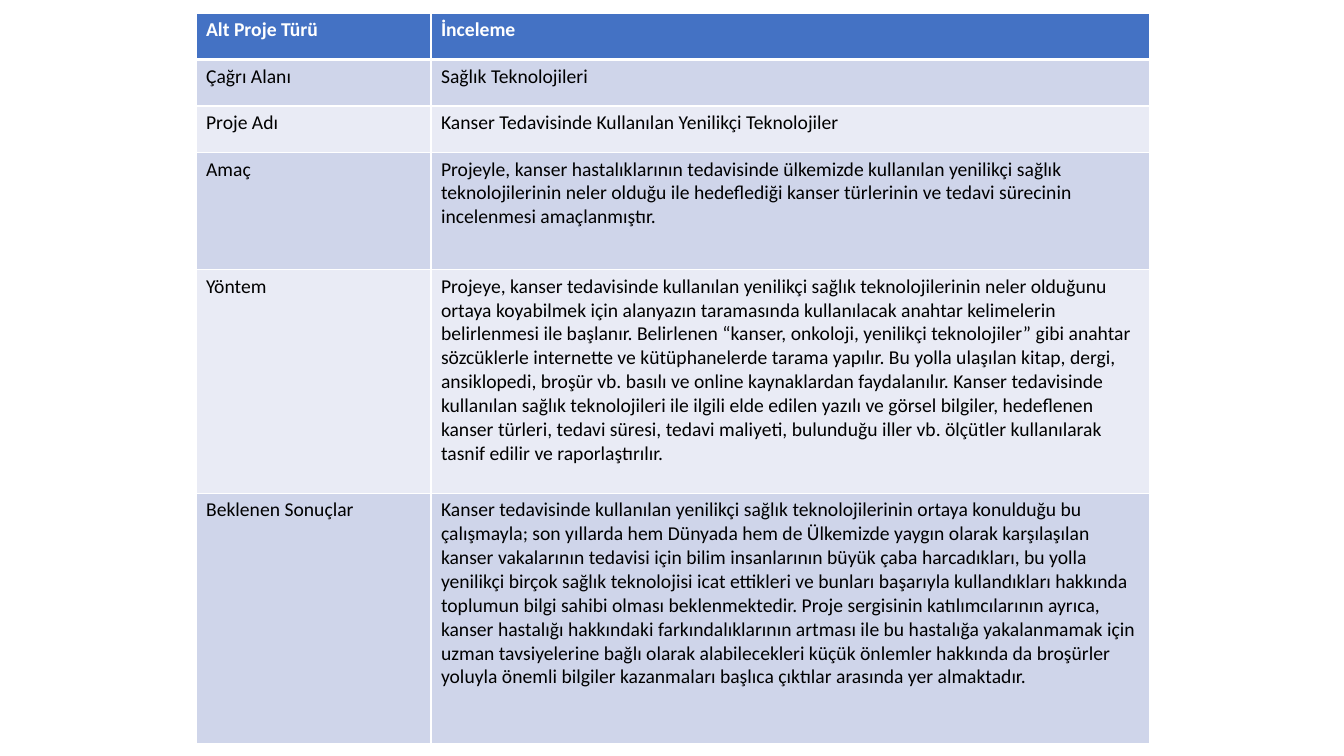
from dataclasses import dataclass

from lxml.etree import SubElement
from pptx import Presentation
from pptx.dml.color import RGBColor
from pptx.oxml.ns import qn
from pptx.util import Cm, Pt


@dataclass(frozen=True)
class Theme:
    """Colours, font and sizes of the slide."""
    font: str = "Calibri"
    size: int = 14
    head: str = "4472C4"
    bands: tuple = ("CFD5EA", "E9EBF5")
    light: str = "FFFFFF"
    dark: str = "000000"
    thin: int = 1
    thick: int = 3


THEME = Theme()
LEFT, TOP = 4.94, 0.33
WIDTHS = (5.92, 18.11)
ROWS = (
    (1.17, "Alt Proje Türü", "İnceleme"),
    (1.17, "Çağrı Alanı", "Sağlık Teknolojileri"),
    (1.17, "Proje Adı", "Kanser Tedavisinde Kullanılan Yenilikçi Teknolojiler"),
    (2.95, "Amaç",
     "Projeyle, kanser hastalıklarının tedavisinde ülkemizde kullanılan yenilikçi "
     "sağlık teknolojilerinin neler olduğu ile hedeflediği kanser türlerinin ve "
     "tedavi sürecinin incelenmesi amaçlanmıştır."),
    (5.64, "Yöntem",
     "Projeye, kanser tedavisinde kullanılan yenilikçi sağlık teknolojilerinin neler "
     "olduğunu ortaya koyabilmek için alanyazın taramasında kullanılacak anahtar "
     "kelimelerin belirlenmesi ile başlanır. Belirlenen “kanser, onkoloji, yenilikçi "
     "teknolojiler” gibi anahtar sözcüklerle internette ve kütüphanelerde tarama "
     "yapılır. Bu yolla ulaşılan kitap, dergi, ansiklopedi, broşür vb. basılı ve "
     "online kaynaklardan faydalanılır. Kanser tedavisinde kullanılan sağlık "
     "teknolojileri ile ilgili elde edilen yazılı ve görsel bilgiler, hedeflenen "
     "kanser türleri, tedavi süresi, tedavi maliyeti, bulunduğu iller vb. ölçütler "
     "kullanılarak tasnif edilir ve raporlaştırılır."),
    (6.3, "Beklenen Sonuçlar",
     "Kanser tedavisinde kullanılan yenilikçi sağlık teknolojilerinin ortaya "
     "konulduğu bu çalışmayla; son yıllarda hem Dünyada hem de Ülkemizde yaygın "
     "olarak karşılaşılan kanser vakalarının tedavisi için bilim insanlarının büyük "
     "çaba harcadıkları, bu yolla yenilikçi birçok sağlık teknolojisi icat ettikleri "
     "ve bunları başarıyla kullandıkları hakkında toplumun bilgi sahibi olması "
     "beklenmektedir. Proje sergisinin katılımcılarının ayrıca, kanser hastalığı "
     "hakkındaki farkındalıklarının artması ile bu hastalığa yakalanmamak için uzman "
     "tavsiyelerine bağlı olarak alabilecekleri küçük önlemler hakkında da broşürler "
     "yoluyla önemli bilgiler kazanmaları başlıca çıktılar arasında yer almaktadır."),
)


def set_edges(cell, top, base):
    """Draw the four borders of a cell, with given top and base widths."""
    props = cell._tc.get_or_add_tcPr()
    edges = {"L": THEME.thin, "R": THEME.thin, "T": top, "B": base}
    for side, width in edges.items():
        line = SubElement(props, qn(f"a:ln{side}"), w=str(Pt(width)))
        fill = SubElement(line, qn("a:solidFill"))
        SubElement(fill, qn("a:srgbClr"), val=THEME.light)


def fill_cell(cell, text, row):
    """Write and style one cell by its row number."""
    head = row == 0
    set_edges(cell, THEME.thick if row == 1 else THEME.thin,
              THEME.thick if head else THEME.thin)
    cell.fill.solid()
    shade = THEME.head if head else THEME.bands[(row - 1) % 2]
    cell.fill.fore_color.rgb = RGBColor.from_string(shade)
    cell.text = text
    font = cell.text_frame.paragraphs[0].font
    font.name, font.size, font.bold = THEME.font, Pt(THEME.size), head
    font.color.rgb = RGBColor.from_string(THEME.light if head else THEME.dark)


def add_grid(slide):
    """Add the project table."""
    high = sum(row[0] for row in ROWS)
    grid = slide.shapes.add_table(len(ROWS), len(WIDTHS), Cm(LEFT), Cm(TOP),
                                  Cm(sum(WIDTHS)), Cm(high)).table
    for column, width in zip(grid.columns, WIDTHS):
        column.width = Cm(width)
    for row, (height, *texts) in enumerate(ROWS):
        grid.rows[row].height = Cm(height)
        for col, text in enumerate(texts):
            fill_cell(grid.cell(row, col), text, row)


def main():
    """Build and save the slide."""
    deck = Presentation()
    deck.slide_width, deck.slide_height = Cm(33.87), Cm(19.05)
    add_grid(deck.slides.add_slide(deck.slide_layouts[6]))
    deck.save("out.pptx")


if __name__ == "__main__":
    main()
